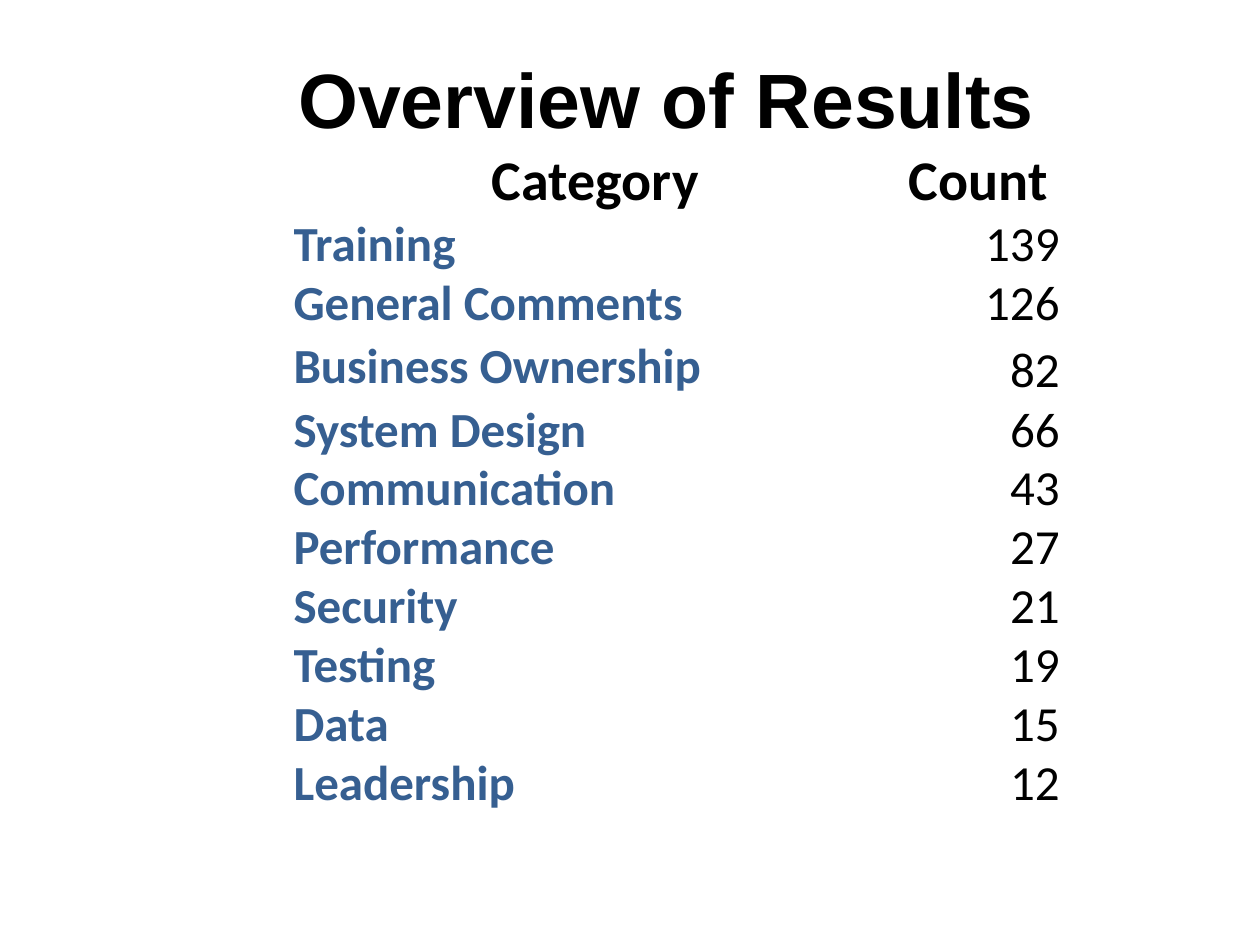
"""Build the slide that lists result categories with their counts."""
from dataclasses import dataclass
from typing import Any

from lxml.etree import SubElement
from pptx import Presentation
from pptx.dml.color import RGBColor
from pptx.enum.text import MSO_ANCHOR, PP_ALIGN
from pptx.oxml.ns import qn
from pptx.util import Pt

COLOURS = {"text": "000000", "category": "365F91", "border": "FFFFFF"}
COLUMN_WIDTHS = (344.88, 92.88)
HEADER_HEIGHT, ROW_HEIGHT = 31.68, 28.08
SPECIAL_HEIGHTS = {"Training": 30.96, "General Comments": 30.96, "Business Ownership": 38.88}
RESULTS = {
    "Training": 139,
    "General Comments": 126,
    "Business Ownership": 82,
    "System Design": 66,
    "Communication": 43,
    "Performance": 27,
    "Security": 21,
    "Testing": 19,
    "Data": 15,
    "Leadership": 12,
}


@dataclass(frozen=True)
class TextStyle:
    size: float
    bold: bool = True
    colour: str = "text"
    align: PP_ALIGN = PP_ALIGN.CENTER
    anchor: MSO_ANCHOR = MSO_ANCHOR.BOTTOM
    font: str = "Calibri"


TITLE = TextStyle(44, anchor=MSO_ANCHOR.MIDDLE, font="Arial")
HEADER = TextStyle(32)
CATEGORY = TextStyle(28, colour="category", align=PP_ALIGN.LEFT, anchor=MSO_ANCHOR.MIDDLE)
COUNT = TextStyle(28, bold=False, align=PP_ALIGN.RIGHT)


def set_attributes(target: Any, values: dict[str, Any]) -> None:
    """Set each named attribute on the target."""
    for name, value in values.items():
        setattr(target, name, value)


def write_text(frame: Any, text: str, style: TextStyle) -> None:
    """Write one styled paragraph into a text frame."""
    para = frame.paragraphs[0]
    para.alignment = style.align
    span = para.add_run()
    span.text = text
    set_attributes(span.font, {"name": style.font, "size": Pt(style.size), "bold": style.bold})
    span.font.color.rgb = RGBColor.from_string(COLOURS[style.colour])


def add_borders(cell: Any) -> None:
    """Give a cell a thin line on all four sides."""
    properties = cell._tc.get_or_add_tcPr()
    for side in ("a:lnL", "a:lnR", "a:lnT", "a:lnB"):
        line = SubElement(properties, qn(side), w=str(Pt(1)))
        fill = SubElement(line, qn("a:solidFill"))
        SubElement(fill, qn("a:srgbClr"), val=COLOURS["border"])


def fill_cell(cell: Any, text: str, style: TextStyle) -> None:
    """Format a table cell and write its text."""
    margins = {f"margin_{side}": Pt(0) for side in ("left", "right", "top", "bottom")}
    set_attributes(cell, {"vertical_anchor": style.anchor, **margins})
    add_borders(cell)
    cell.fill.background()
    write_text(cell.text_frame, text, style)


def add_title(page: Any, text: str) -> None:
    """Add the slide title."""
    box = page.shapes.add_textbox(Pt(72), Pt(21.6), Pt(617.76), Pt(68.4))
    set_attributes(box.text_frame, {"word_wrap": True, "vertical_anchor": TITLE.anchor})
    write_text(box.text_frame, text, TITLE)


def add_results(page: Any) -> None:
    """Add the table of categories and counts."""
    holder = page.shapes.add_table(
        len(RESULTS) + 1, len(COLUMN_WIDTHS),
        Pt(167.76), Pt(84.24), Pt(sum(COLUMN_WIDTHS)), Pt(379.44),
    )
    table = holder.table
    set_attributes(table, {"first_row": False, "horz_banding": False})
    for column, width in zip(table.columns, COLUMN_WIDTHS):
        column.width = Pt(width)
    heights = [HEADER_HEIGHT, *(SPECIAL_HEIGHTS.get(name, ROW_HEIGHT) for name in RESULTS)]
    entries = [("Category", "Count"), *RESULTS.items()]
    for index, (row, height, entry) in enumerate(zip(table.rows, heights, entries)):
        row.height = Pt(height)
        styles = (CATEGORY, COUNT) if index else (HEADER, HEADER)
        for cell, value, style in zip(row.cells, entry, styles):
            fill_cell(cell, str(value), style)


def main() -> None:
    """Create and save the deck."""
    deck = Presentation()
    set_attributes(deck, {"slide_width": Pt(720), "slide_height": Pt(540)})
    page = deck.slides.add_slide(deck.slide_layouts[6])
    add_title(page, "Overview of Results")
    add_results(page)
    deck.save("out.pptx")


if __name__ == "__main__":
    main()
